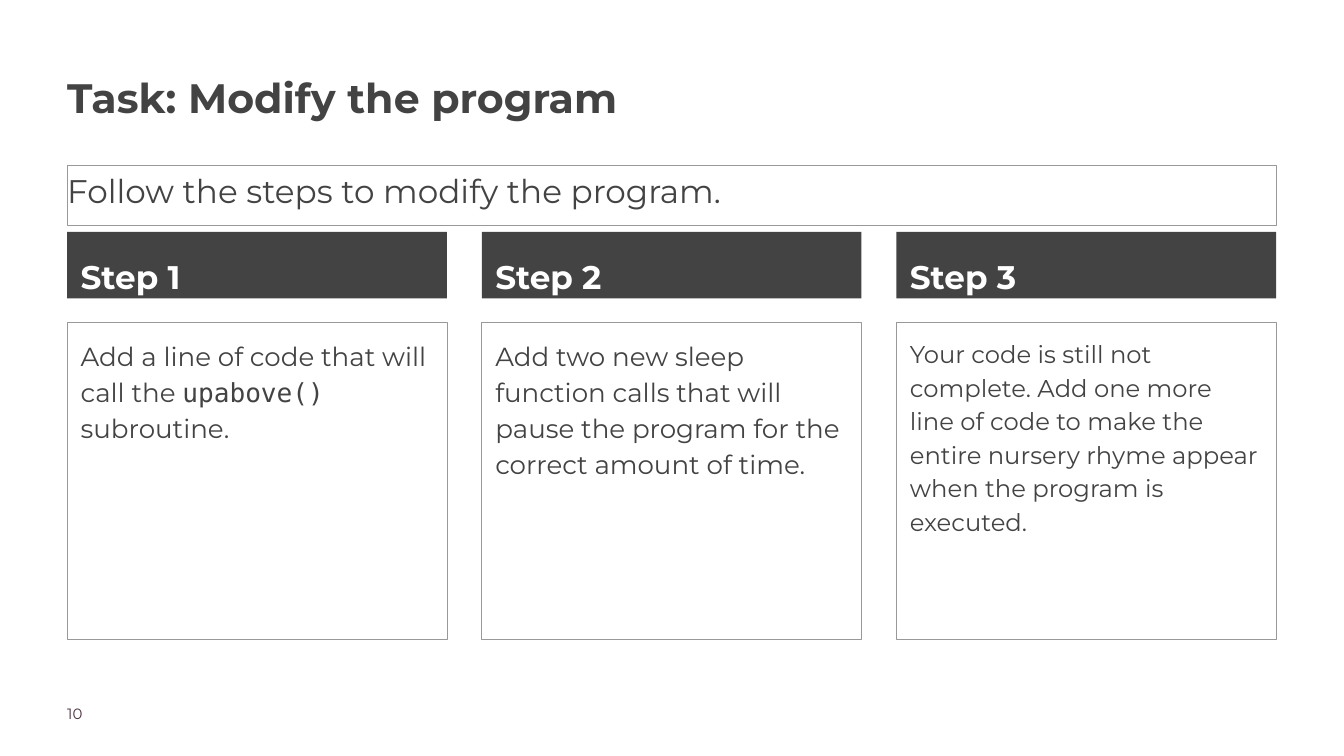
from pptx import Presentation
from pptx.dml.color import RGBColor
from pptx.enum.shapes import MSO_SHAPE
from pptx.enum.text import MSO_ANCHOR, PP_ALIGN
from pptx.util import Inches, Pt

RECTANGLE = MSO_SHAPE.RECTANGLE
TOP = MSO_ANCHOR.TOP
LEFT = PP_ALIGN.LEFT

SANS = "Montserrat"
MONO = "DejaVu Sans Mono"
DARK = "434343"
GREY = "999999"
WHITE = "FFFFFF"
PLUM = "4B3241"

MARGIN = 1
COLUMN_WIDTH = 5.65
COLUMN_PITCH = 6.17
HEADER_TOP, HEADER_HEIGHT = 3.45, 0.99
CARD_TOP, CARD_HEIGHT = 4.79, 4.72
PADDING = 0.2


def color(hex_string):
    return RGBColor.from_string(hex_string)


def add_box(position, runs, size, text_color, bold=False, padding=0,
            line_spacing=1.15, space_after=0, fill=None, line=None):
    bounds = [Inches(length) for length in position]
    if fill or line:
        shape = slide.shapes.add_shape(RECTANGLE, *bounds)
        shape.shadow.inherit = False
        if fill:
            shape.fill.solid()
            shape.fill.fore_color.rgb = color(fill)
        else:
            shape.fill.background()
        if line:
            shape.line.color.rgb = color(line)
            shape.line.width = Pt(0.75)
        else:
            shape.line.fill.background()
    else:
        shape = slide.shapes.add_textbox(*bounds)
    frame = shape.text_frame
    frame.word_wrap = True
    frame.vertical_anchor = TOP
    frame.margin_left = frame.margin_right = Inches(padding)
    frame.margin_top = frame.margin_bottom = Inches(padding)
    paragraph = frame.paragraphs[0]
    paragraph.alignment = LEFT
    paragraph.line_spacing = line_spacing
    paragraph.space_after = Pt(space_after)
    for text, font_name in runs:
        run = paragraph.add_run()
        run.text = text
        run.font.name = font_name
        run.font.size = Pt(size)
        run.font.bold = bold
        run.font.color.rgb = color(text_color)


presentation = Presentation()
presentation.slide_width = Inches(20)
presentation.slide_height = Inches(11.25)
slide = presentation.slides.add_slide(presentation.slide_layouts[6])

add_box((MARGIN, 2.46, 18, 0.89), [("Follow the steps to modify the program.", SANS)],
        35, DARK, space_after=20, line=GREY)

steps = [
    (28, [("Add a line of code that will call the ", SANS),
          ("upabove()", MONO),
          (" subroutine.", SANS)]),
    (28, [("Add two new sleep function calls that will pause the program "
           "for the correct amount of time.", SANS)]),
    (26, [("Your code is still not complete. Add one more line of code to make "
           "the entire nursery rhyme appear when the program is executed.", SANS)]),
]
for column, (size, instruction) in enumerate(steps):
    left = MARGIN + column * COLUMN_PITCH
    add_box((left, HEADER_TOP, COLUMN_WIDTH, HEADER_HEIGHT), [(f"Step {column + 1}", SANS)],
            35, WHITE, bold=True, padding=PADDING, line_spacing=1.3, fill=DARK)
    add_box((left, CARD_TOP, COLUMN_WIDTH, CARD_HEIGHT), instruction,
            size, DARK, padding=PADDING, space_after=12, line=GREY)

add_box((MARGIN, 0.97, 14.44, 0.99), [("Task: Modify the program", SANS)], 44, DARK, bold=True)
add_box((MARGIN, 10.48, 1.57, 0.39), [("10", SANS)], 16, PLUM, line_spacing=1.0)

presentation.save("out.pptx")
